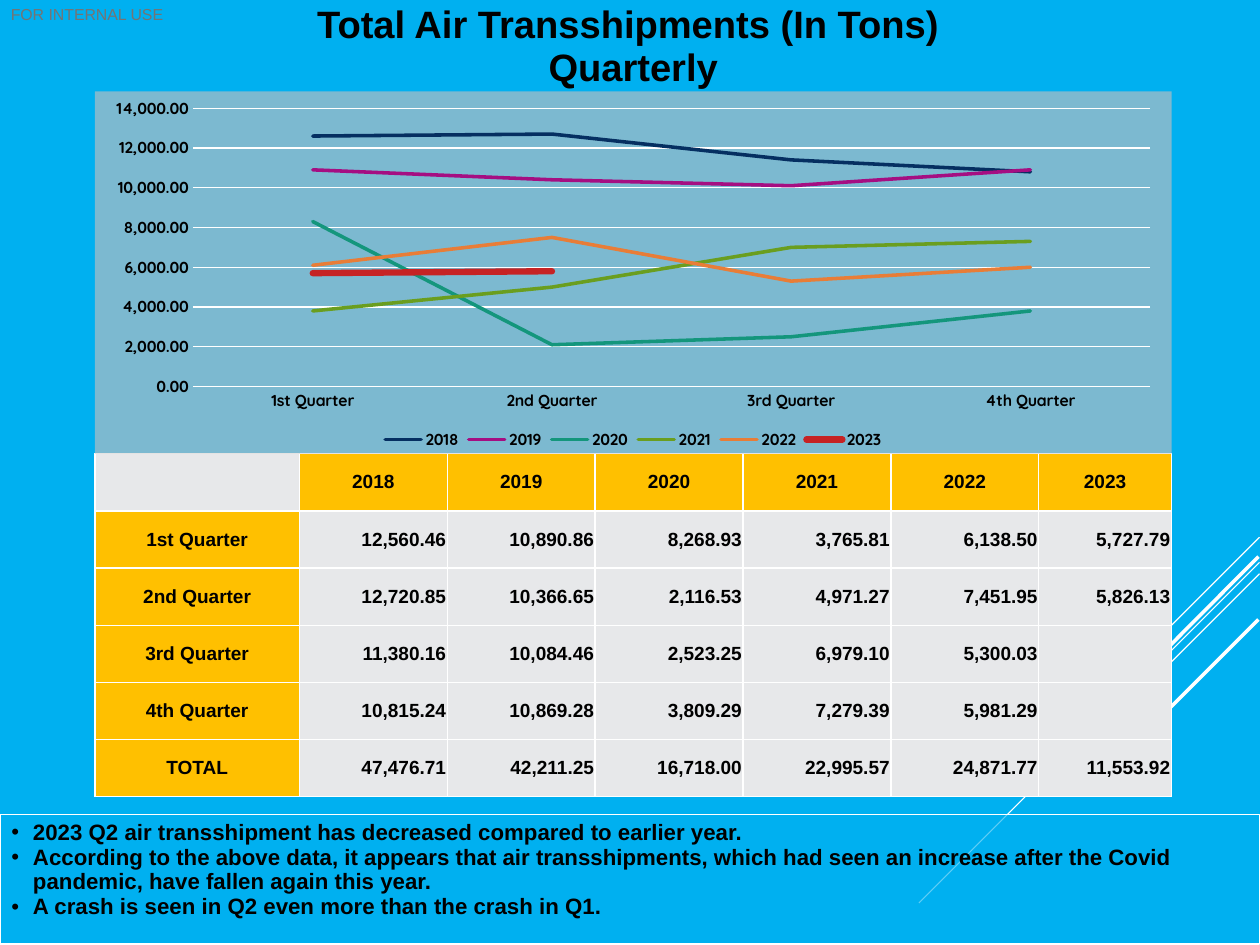
from lxml.etree import SubElement as Sub
from pptx import Presentation
from pptx.chart.data import CategoryChartData as Data
from pptx.dml.color import RGBColor as RGB
from pptx.enum.chart import XL_CHART_TYPE as Kind, XL_LEGEND_POSITION as Place, XL_TICK_MARK as Tick
from pptx.enum.shapes import MSO_CONNECTOR as Conn, MSO_SHAPE as Form
from pptx.enum.text import MSO_ANCHOR as Anchor, PP_ALIGN as Align
from pptx.oxml import parse_xml
from pptx.oxml.ns import nsdecls, qn
from pptx.util import Inches, Pt

SKY, WHITE, BLACK, GOLD, PALE = "00B0F0", "FFFFFF", "000000", "FFC000", "E7E8EA"
TERMS = ["1st Quarter", "2nd Quarter", "3rd Quarter", "4th Quarter"]
YEARS = {
    "2018": [12560.46, 12720.85, 11380.16, 10815.24],
    "2019": [10890.86, 10366.65, 10084.46, 10869.28],
    "2020": [8268.93, 2116.53, 2523.25, 3809.29],
    "2021": [3765.81, 4971.27, 6979.10, 7279.39],
    "2022": [6138.50, 7451.95, 5300.03, 5981.29],
    "2023": [5727.79, 5826.13, None, None],
}
HUES = ["052F61", "A50E82", "14967C", "6A9E1F", "E87D37", "C62324"]
WIDE, FIRST, LAST = 9.42, 1.79, 1.16
WIDTHS = [FIRST] + [(WIDE - FIRST - LAST) / 5] * 5 + [LAST]
RAYS = [
    (11.02, 4.7, 10.11, 5.61, 0.75),
    (11.02, 4.92, 8.04, 7.9, 0.75),
    (11.02, 5.02, 9.13, 6.91, 0.75),
    (11.01, 4.87, 9.28, 6.61, 2.25),
    (11.01, 5.42, 9.75, 6.68, 2.25),
]
NOTES = [
    "2023 Q2 air transshipment has decreased compared to earlier year.",
    "According to the above data, it appears that air transshipments, which had seen an increase "
    "after the Covid pandemic, have fallen again this year.",
    "A crash is seen in Q2 even more than the crash in Q1.",
]


def put(item, vals):
    """Set each attribute named in vals on item."""
    for key, val in vals.items():
        setattr(item, key, val)


def paint(fmt, hue):
    """Give a fill a solid colour."""
    fmt.solid()
    fmt.fore_color.rgb = RGB.from_string(hue)


def stroke(line, hue, width):
    """Give a line its colour and width."""
    paint(line.fill, hue)
    line.width = Pt(width)


def style(font, size, hue=BLACK, bold=True, name="Arial"):
    """Set the face, size and colour of a font."""
    put(font, {"name": name, "size": Pt(size), "bold": bold})
    font.color.rgb = RGB.from_string(hue)


def write(frame, lines, size, align, hue=BLACK, bold=True):
    """Write one paragraph for each line of text."""
    for num, line in enumerate(lines):
        para = frame.add_paragraph() if num else frame.paragraphs[0]
        put(para, {"alignment": align, "line_spacing": 0.93})
        run = para.add_run()
        run.text = line
        style(run.font, size, hue, bold)


def add_label(slide, box, lines, size, top=0, **look):
    """Add a centred text box."""
    frame = slide.shapes.add_textbox(*map(Inches, box)).text_frame
    put(frame, {"word_wrap": True, "vertical_anchor": Anchor.MIDDLE, "margin_left": 0,
                "margin_right": 0, "margin_top": Inches(top), "margin_bottom": 0})
    write(frame, lines, size, Align.CENTER, **look)


def add_ray(slide, x1, y1, x2, y2, width):
    """Add a slanted white line."""
    ray = slide.shapes.add_connector(Conn.STRAIGHT, *map(Inches, (x1, y1, x2, y2)))
    stroke(ray.line, WHITE, width)
    Sub(ray.element.spPr, qn("a:effectLst"))


def add_notes(slide):
    """Add the outlined box of bullet points."""
    box = slide.shapes.add_shape(Form.RECTANGLE, *map(Inches, (0, 7.13, 11.02, 1.13)))
    box.shadow.inherit = False
    paint(box.fill, SKY)
    tint = box.element.spPr.find(qn("a:solidFill"))[0]
    Sub(tint, qn("a:alpha"), val="63000")
    stroke(box.line, WHITE, 0.75)
    frame = box.text_frame
    put(frame, {"word_wrap": True, "vertical_anchor": Anchor.TOP})
    write(frame, NOTES, 14, Align.LEFT)
    for para in frame.paragraphs:
        props = para._p.get_or_add_pPr()
        props.set("marL", str(Inches(0.19)))
        props.set("indent", str(Inches(-0.19)))
        Sub(Sub(props, qn("a:buClr")), qn("a:srgbClr"), val=BLACK)
        Sub(props, qn("a:buFont"), typeface="Arial")
        Sub(props, qn("a:buChar"), char="•")


def fill_cell(cell, text, hue, align):
    """Set the borders, fill and text of a cell."""
    props = cell._tc.get_or_add_tcPr()
    for side in "LRTB":
        edge = Sub(props, qn("a:ln" + side), w=str(Pt(1)))
        Sub(Sub(edge, qn("a:solidFill")), qn("a:srgbClr"), val=WHITE)
    paint(cell.fill, hue)
    put(cell, {"vertical_anchor": Anchor.MIDDLE, "margin_left": Inches(0.01),
               "margin_right": Inches(0.01), "margin_top": Inches(0.01), "margin_bottom": 0})
    if text:
        write(cell.text_frame, [text], 12, align)


def add_grid(slide):
    """Add the table of quarters and totals."""
    rows = [["", *YEARS]]
    sums = [sum(filter(None, vals)) for vals in YEARS.values()]
    for head, vals in zip([*TERMS, "TOTAL"], [*zip(*YEARS.values()), sums]):
        rows.append([head] + [f"{val:,.2f}" if val else "" for val in vals])
    table = slide.shapes.add_table(6, 7, *map(Inches, (0.83, 3.97, WIDE, 3))).table
    for col, width in zip(table.columns, WIDTHS):
        col.width = Inches(width)
    for i, row in enumerate(rows):
        for j, text in enumerate(row):
            head = (i == 0) != (j == 0)
            fill_cell(table.cell(i, j), text, GOLD if head else PALE,
                      Align.CENTER if head else Align.RIGHT)


def add_graph(slide):
    """Add the line chart of quarters by year."""
    data = Data(number_format="#,##0.00")
    data.categories = TERMS
    for year, vals in YEARS.items():
        data.add_series(year, [val and round(val, -2) for val in vals])
    box = map(Inches, (0.83, 0.8, WIDE, 3.17))
    chart = slide.shapes.add_chart(Kind.LINE, *box, data).chart
    put(chart, {"has_title": False, "has_legend": True})
    style(chart.font, 10, name="Quicksand")
    put(chart.legend, {"position": Place.BOTTOM, "include_in_layout": False})
    chart.plots[0].vary_by_categories = False
    for line, hue in zip(chart.plots[0].series, HUES):
        line.smooth = False
        stroke(line.format.line, hue, 4 if line.name == "2023" else 2.25)
        line.format.line._get_or_add_ln().set("cap", "rnd")
    base, scale = chart.category_axis, chart.value_axis
    for part in (base, scale):
        put(part, {"major_tick_mark": Tick.NONE, "minor_tick_mark": Tick.NONE})
    for part in (base.tick_labels, scale.tick_labels, chart.legend):
        style(part.font, 10, name="Quicksand")
    stroke(base.format.line, WHITE, 0.75)
    put(scale, {"minimum_scale": 0, "maximum_scale": 14000, "major_unit": 2000})
    put(scale.tick_labels, {"number_format": "#,##0.00", "number_format_is_linked": False})
    scale.format.line.fill.background()
    stroke(scale.major_gridlines.format.line, WHITE, 0.75)
    back = parse_xml(
        f'<c:spPr {nsdecls("c", "a")}><a:solidFill><a:srgbClr val="BFBFBF"><a:alpha val="65000"/>'
        '</a:srgbClr></a:solidFill><a:ln><a:noFill/></a:ln></c:spPr>')
    chart.element.find(qn("c:chart")).addnext(back)


def main():
    """Build the slide and save it."""
    deck = Presentation()
    put(deck, {"slide_width": Inches(28 / 2.54), "slide_height": Inches(21 / 2.54)})
    slide = deck.slides.add_slide(deck.slide_layouts[6])
    paint(slide.background.fill, SKY)
    for ray in RAYS:
        add_ray(slide, *ray)
    add_label(slide, (0, 0, 1.52, 0.26), ["FOR INTERNAL USE"], 10, hue="747474", bold=False)
    title = ["Total Air Transshipments (In Tons) ", "Quarterly"]
    add_label(slide, (0.58, 0, 9.92, 0.8), title, 24, top=0.03)
    add_notes(slide)
    add_grid(slide)
    add_graph(slide)
    deck.save("out.pptx")


if __name__ == "__main__":
    main()
